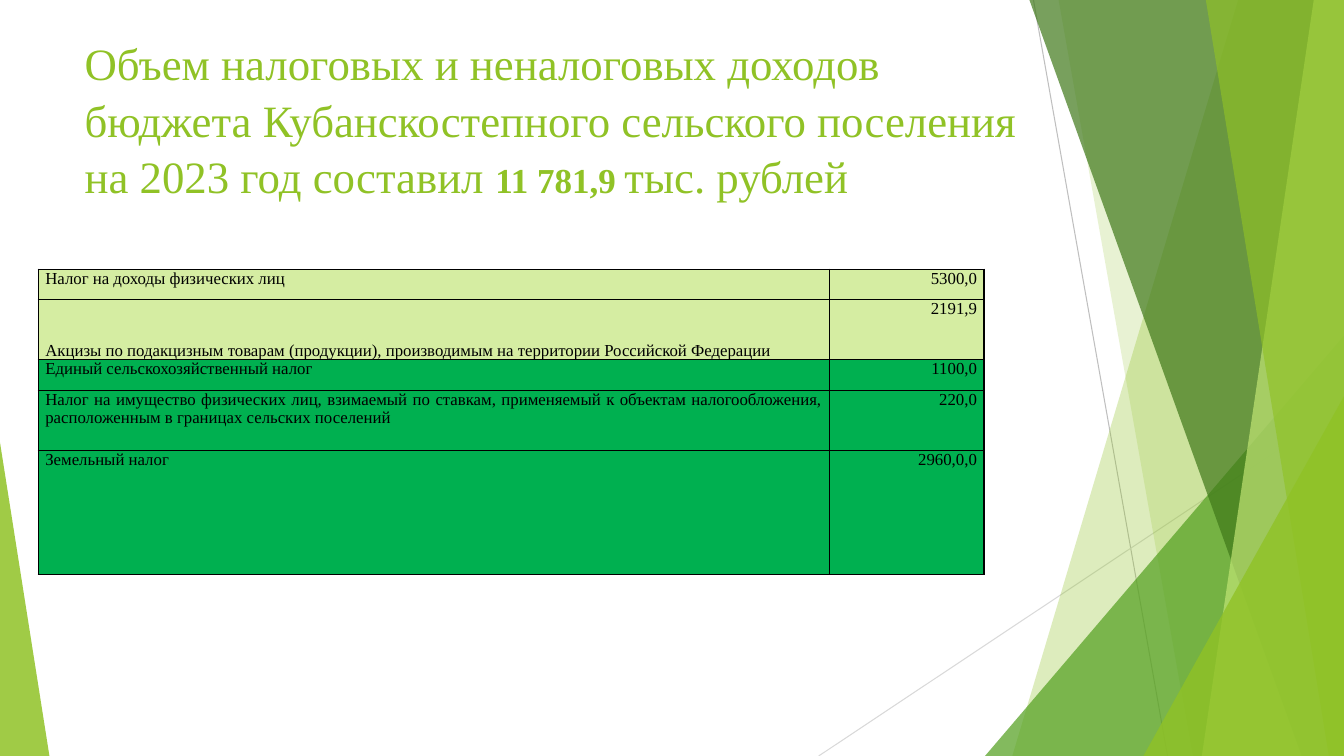
from lxml import etree
from pptx import Presentation
from pptx.dml.color import RGBColor
from pptx.enum.shapes import MSO_CONNECTOR, MSO_SHAPE
from pptx.enum.text import MSO_ANCHOR, PP_ALIGN
from pptx.oxml.ns import qn
from pptx.util import Inches, Pt

STRAIGHT = MSO_CONNECTOR.STRAIGHT
TRIANGLE = MSO_SHAPE.ISOSCELES_TRIANGLE
TOP, BOTTOM = MSO_ANCHOR.TOP, MSO_ANCHOR.BOTTOM
JUSTIFY, RIGHT = PP_ALIGN.JUSTIFY, PP_ALIGN.RIGHT

LIME = RGBColor(0x90, 0xC2, 0x26)
GREEN = RGBColor(0x54, 0xA0, 0x21)
DARK_GREEN = RGBColor(0x3F, 0x78, 0x19)
PALE_LIME = RGBColor(0xC0, 0xE4, 0x74)
ROW_LIGHT = RGBColor(0xD5, 0xED, 0xA2)
ROW_GREEN = RGBColor(0x00, 0xB0, 0x50)
GREY = RGBColor(0xBF, 0xBF, 0xBF)
LIGHT_GREY = RGBColor(0xD9, 0xD9, 0xD9)
BLACK = RGBColor(0, 0, 0)
FONT = "Times New Roman"
WIDTH, HEIGHT = 13.33, 7.5


def paint(shape, color, opacity):
    shape.shadow.inherit = False
    shape.line.fill.background()
    shape.fill.solid()
    shape.fill.fore_color.rgb = color
    tint = shape.fill._xPr.find(qn("a:solidFill"))[0]
    etree.SubElement(tint, qn("a:alpha"), val=str(opacity * 1000))


def style_run(run, size, color, bold=False):
    run.font.name = FONT
    run.font.size = Pt(size)
    run.font.color.rgb = color
    run.font.bold = bold


prs = Presentation()
prs.slide_width, prs.slide_height = Inches(WIDTH), Inches(HEIGHT)
slide = prs.slides.add_slide(prs.slide_layouts[6])
shapes = slide.shapes

for x1, y1, x2, y2, color in [
    (10.25, 0, 11.58, HEIGHT, GREY),
    (WIDTH, 4.03, 8.12, HEIGHT, LIGHT_GREY),
]:
    ray = shapes.add_connector(STRAIGHT, Inches(x1), Inches(y1), Inches(x2), Inches(y2))
    ray.line.color.rgb = color
    ray.line.width = Pt(0.75)
    etree.SubElement(ray._element.spPr, qn("a:effectLst"))

facets = [
    ("band", 12.28, 10.04, LIME, 30),
    ("band", 10.5, 11.83, LIME, 20),
    ("corner", 9.77, 3.33, GREEN, 72),
    ("band", 10.21, 12.91, DARK_GREEN, 70),
    ("band", 13.03, 11.92, PALE_LIME, 70),
    ("band", 11.96, 13.18, LIME, 65),
    ("corner", 11.34, 3.93, LIME, 80),
]
for form, start, end, color, opacity in facets:
    if form == "band":
        outline = shapes.build_freeform(Inches(start), 0)
        outline.add_line_segments(
            [(Inches(x), Inches(y)) for x, y in [(WIDTH, 0), (WIDTH, HEIGHT), (end, HEIGHT)]]
        )
        facet = outline.convert_to_shape()
    else:
        facet = shapes.add_shape(
            TRIANGLE, Inches(start), Inches(end), Inches(WIDTH - start), Inches(HEIGHT - end)
        )
        facet.adjustments[0] = 1
    paint(facet, color, opacity)

left_wedge = shapes.add_shape(TRIANGLE, 0, Inches(4.39), Inches(0.49), Inches(3.11))
left_wedge.adjustments[0] = 0
paint(left_wedge, LIME, 85)

title = shapes.add_textbox(Inches(0.74), Inches(0.25), Inches(9.59), Inches(2.11))
title_frame = title.text_frame
title_frame.word_wrap = True
title_frame.vertical_anchor = TOP
title_frame.margin_top = Inches(0.08)
title_frame.margin_right = 0
heading = title_frame.paragraphs[0]
heading.line_spacing = 1.05
for words, size, bold in [
    (
        "Объем налоговых и неналоговых доходов бюджета Кубанскостепного "
        "сельского поселения на 2023 год составил ",
        32,
        False,
    ),
    ("11 781,9 ", 25, True),
    ("тыс. рублей", 32, False),
]:
    run = heading.add_run()
    run.text = words
    style_run(run, size, LIME, bold)

revenues = [
    ("Налог на доходы физических лиц", "5300,0", 0.3, ROW_LIGHT, TOP),
    (
        "Акцизы по подакцизным товарам (продукции), производимым на территории "
        "Российской Федерации",
        "2191,9", 0.6, ROW_LIGHT, BOTTOM,
    ),
    ("Единый сельскохозяйственный налог", "1100,0", 0.3, ROW_GREEN, TOP),
    (
        "Налог на имущество физических лиц, взимаемый по ставкам, применяемый к объектам "
        "налогообложения, расположенным в границах сельских поселений",
        "220,0", 0.6, ROW_GREEN, TOP,
    ),
    ("Земельный налог", "2960,0,0", 1.23, ROW_GREEN, TOP),
]
table = shapes.add_table(
    len(revenues), 2, Inches(0.38), Inches(2.67), Inches(9.38), Inches(3.03)
).table
table.first_row = False
table.horz_banding = False
table.columns[0].width = Inches(7.85)
table.columns[1].width = Inches(1.53)

for row, (tax, amount, height, color, tax_anchor) in enumerate(revenues):
    table.rows[row].height = Inches(height)
    for col, (text, align, anchor) in enumerate([(tax, JUSTIFY, tax_anchor), (amount, RIGHT, TOP)]):
        cell = table.cell(row, col)
        cell.margin_left = cell.margin_right = Inches(0.07)
        cell.margin_top = cell.margin_bottom = 0
        cell.vertical_anchor = anchor
        entry = cell.text_frame.paragraphs[0]
        entry.text = text
        entry.alignment = align
        style_run(entry.runs[0], 12, BLACK)
        cell_props = cell._tc.get_or_add_tcPr()
        for side in ("lnL", "lnR", "lnT", "lnB"):
            border = etree.SubElement(cell_props, qn(f"a:{side}"), w=str(Pt(1)))
            border_fill = etree.SubElement(border, qn("a:solidFill"))
            etree.SubElement(border_fill, qn("a:srgbClr"), val=str(BLACK))
        cell.fill.solid()
        cell.fill.fore_color.rgb = color

prs.save("out.pptx")
